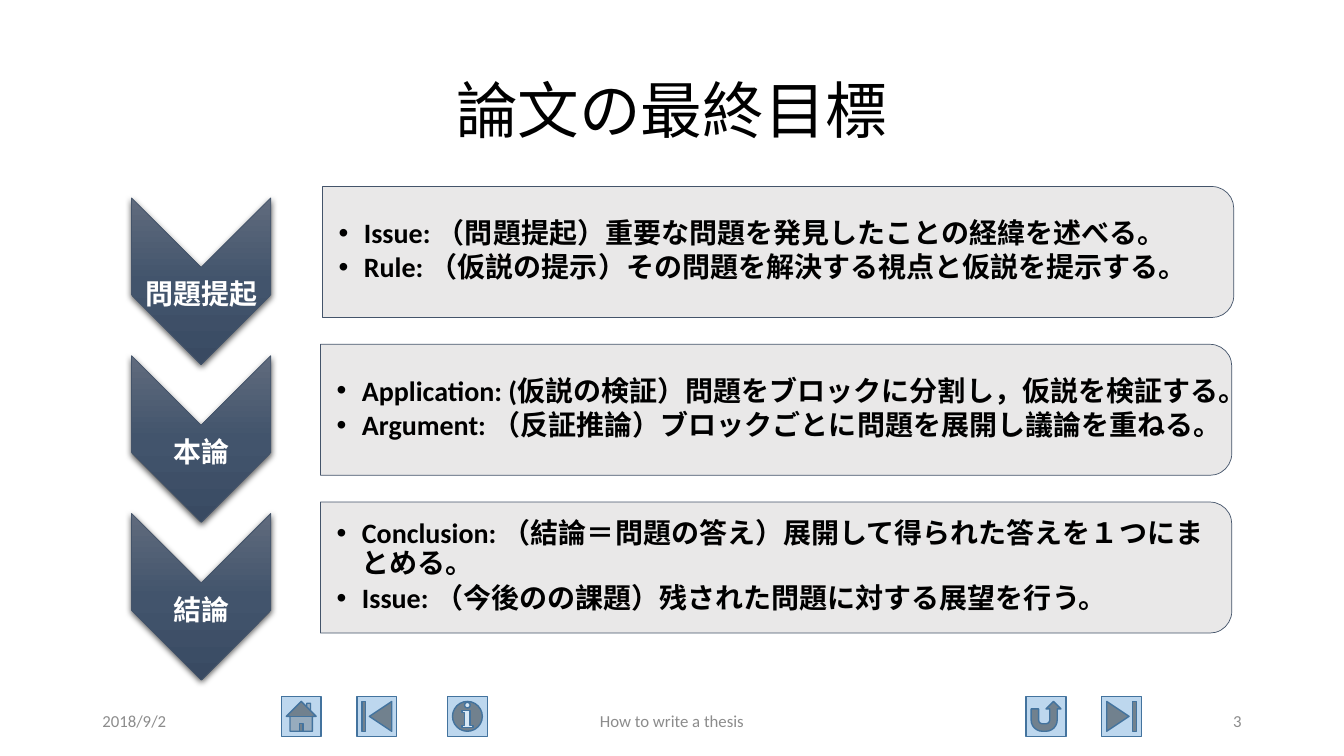
"""Builds the slide on the final goal of a thesis: three stages with their tasks."""
from lxml import etree
from pptx import Presentation
from pptx.dml.color import RGBColor
from pptx.enum.shapes import MSO_SHAPE
from pptx.enum.text import MSO_ANCHOR, PP_ALIGN
from pptx.oxml import parse_xml
from pptx.oxml.ns import nsdecls, qn
from pptx.util import Pt

LEFT, CENTER, RIGHT = PP_ALIGN.LEFT, PP_ALIGN.CENTER, PP_ALIGN.RIGHT
MIDDLE = MSO_ANCHOR.MIDDLE
CHEVRON, PANEL = MSO_SHAPE.CHEVRON, MSO_SHAPE.ROUND_2_SAME_RECTANGLE
COLORS = {
    "text": "000000", "label": "FFFFFF", "footer": "8C8C8C",
    "button": "BDD7EE", "button_line": "43739E",
    "panel": "E7E6E6", "stage_line": "44546A",
    "chevron_top": "606B7D", "chevron_middle": "42546C", "chevron_bottom": "394A62",
}
BUTTONS = [
    (MSO_SHAPE.ACTION_BUTTON_HOME, 201),
    (MSO_SHAPE.ACTION_BUTTON_BEGINNING, 255),
    (MSO_SHAPE.ACTION_BUTTON_RETURN, 733),
    (MSO_SHAPE.ACTION_BUTTON_END, 787),
    (MSO_SHAPE.ACTION_BUTTON_INFORMATION, 319.7),
]
FOOTERS = [
    ("2018/9/2", 66, 216, LEFT),
    ("How to write a thesis", 318, 324, CENTER),
    ("3", 678, 216, RIGHT),
]
STAGES = [
    ("問題提起", 1.4, [
        "Issue: （問題提起）重要な問題を発見したことの経緯を述べる。",
        "Rule: （仮説の提示）その問題を解決する視点と仮説を提示する。"]),
    ("本論", 0, [
        "Application: (仮説の検証）問題をブロックに分割し，仮説を検証する。",
        "Argument: （反証推論）ブロックごとに問題を展開し議論を重ねる。"]),
    ("結論", 0, [
        "Conclusion: （結論＝問題の答え）展開して得られた答えを１つにまとめる。",
        "Issue: （今後のの課題）残された問題に対する展望を行う。"]),
]
STAGE_PITCH = 112.7
GRADIENT = [(0, "chevron_top"), (50, "chevron_middle"), (100, "chevron_bottom")]

presentation = Presentation()
presentation.slide_width, presentation.slide_height = Pt(960), Pt(540)
slide = presentation.slides.add_slide(presentation.slide_layouts[6])


def add_text(text, left, top, width, height, size=20, color="text", bold=False,
             align=LEFT, spacing=1.0, after=0, margins=(7.2, 3.6, 7.2, 3.6), bullet=False):
    box = slide.shapes.add_textbox(Pt(left), Pt(top), Pt(width), Pt(height))
    frame = box.text_frame
    frame.word_wrap = True
    frame.vertical_anchor = MIDDLE
    frame.margin_left, frame.margin_top, frame.margin_right, frame.margin_bottom = map(Pt, margins)
    frame.text = text
    for paragraph in frame.paragraphs:
        paragraph.alignment = align
        paragraph.line_spacing = spacing
        paragraph.space_after = Pt(after)
        font = paragraph.runs[0].font
        font.name, font.size, font.bold = "Calibri", Pt(size), bold
        font.color.rgb = RGBColor.from_string(COLORS[color])
        if bullet:
            properties = paragraph._p.get_or_add_pPr()
            properties.set("marL", str(Pt(18)))
            properties.set("indent", str(Pt(-18)))
            etree.SubElement(properties, qn("a:buFont")).set("typeface", "Arial")
            etree.SubElement(properties, qn("a:buChar")).set("char", "•")


def add_shape(kind, left, top, width, height, fill, line, line_width, rotation=0):
    shape = slide.shapes.add_shape(kind, Pt(left), Pt(top), Pt(width), Pt(height))
    shape.rotation = rotation
    shape.fill.solid()
    shape.fill.fore_color.rgb = RGBColor.from_string(COLORS[fill])
    shape.line.color.rgb = RGBColor.from_string(COLORS[line])
    shape.line.width = Pt(line_width)
    shape.shadow.inherit = False
    return shape


for kind, left in BUTTONS:
    add_shape(kind, left, 497.5, 28.4, 28.4, "button", "button_line", 1)

add_text("論文の最終目標", 66, 28.8, 828, 104.4, size=44, align=CENTER, spacing=0.9)
for text, left, width, align in FOOTERS:
    add_text(text, left, 500.4, width, 28.8, size=12, color="footer", align=align)

stops = "".join(
    f'<a:gs pos="{position * 1000}"><a:srgbClr val="{COLORS[name]}"/></a:gs>'
    for position, name in GRADIENT)
for index, (label, shift, tasks) in enumerate(STAGES):
    drop = index * STAGE_PITCH

    chevron = add_shape(CHEVRON, 84.2, 151.2 + drop, 119, 99.4,
                        "chevron_middle", "stage_line", 0.5, rotation=90)
    properties = chevron._element.spPr
    properties.replace(properties.find(qn("a:solidFill")), parse_xml(
        f'<a:gradFill {nsdecls("a")} rotWithShape="0"><a:gsLst>{stops}</a:gsLst>'
        '<a:lin ang="5400000" scaled="0"/></a:gradFill>'))
    properties.find(qn("a:effectLst")).append(parse_xml(
        f'<a:outerShdw {nsdecls("a")} blurRad="{Pt(4.5)}" dist="{Pt(1.5)}" dir="5400000" '
        'algn="ctr" rotWithShape="0"><a:srgbClr val="000000"><a:alpha val="63000"/>'
        '</a:srgbClr></a:outerShdw>'))
    add_text(label, 94.3, 201.5 + drop, 99.4, 19.4, color="label", bold=True,
             align=CENTER, spacing=0.9, margins=(0.7, 0.7, 0.7, 0.7))

    panel = add_shape(PANEL, 507.6 + shift, -145.4 + drop, 93.6, 650.9,
                      "panel", "stage_line", 0.5, rotation=90)
    panel_color = panel._element.spPr.find(qn("a:solidFill"))[0]
    etree.SubElement(panel_color, qn("a:alpha")).set("val", "90000")
    add_text("\n".join(tasks), 229 + shift, 137.5 + drop, 645.8, 84.2, bold=True,
             spacing=0.9, after=3, margins=(11.5, 0.7, 0.7, 0.7), bullet=True)

presentation.save("out.pptx")
